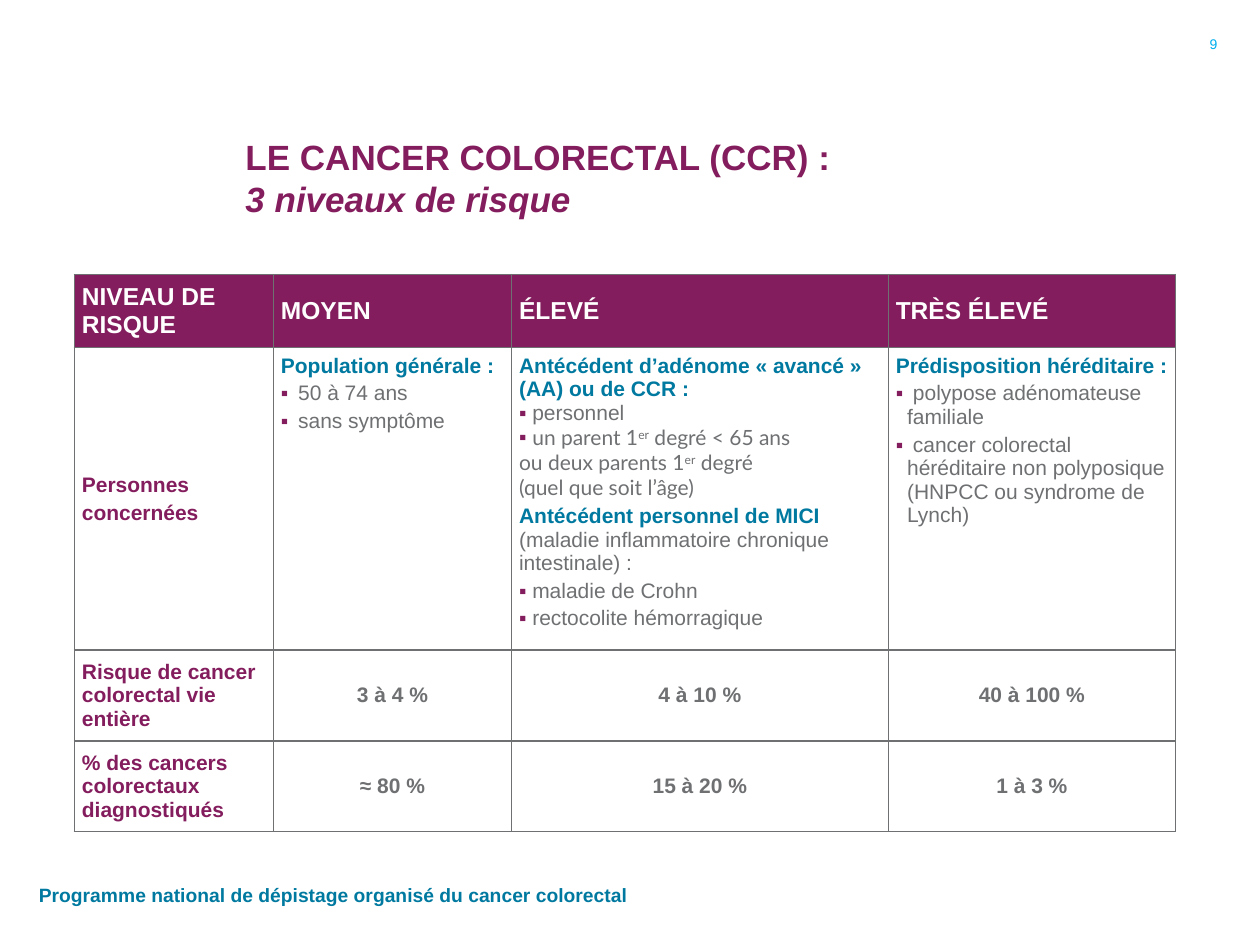
"""Build the slide on the three risk levels of colorectal cancer."""
from copy import deepcopy

from lxml import etree
from pptx import Presentation
from pptx import util as u
from pptx.dml.color import RGBColor
from pptx.enum import text
from pptx.oxml.ns import qn

COLORS = {"plum": "841D5D", "teal": "0079A0", "grey": "6E7072", "white": "FFFFFF", "cyan": "00AEEF"}
STYLES = {
    "title": {"size": 20, "color": "plum", "bold": True},
    "subtitle": {"size": 20, "color": "plum", "bold": True, "italic": True},
    "footer": {"size": 11, "color": "teal", "bold": True},
    "number": {"size": 8, "color": "cyan"},
    "header": {"size": 14, "color": "white", "bold": True},
    "label": {"size": 12, "color": "plum", "bold": True},
    "heading": {"size": 12, "color": "teal", "bold": True},
    "value": {"size": 12, "color": "grey", "bold": True},
    "body": {"size": 12, "color": "grey"},
    "lato": {"size": 12, "color": "grey", "name": "Lato"},
    "super": {"size": 12, "color": "grey", "name": "Lato", "baseline": "30000"},
}


def add_spans(para, spans):
    for style, words in spans:
        for index, line in enumerate(words.split("\n")):
            if index:
                line_break = para._p.add_br()
                line_break.append(deepcopy(span._r.rPr))
            span = para.add_run()
            span.text = line
            values = {"name": "Arial", "bold": False, **STYLES[style]}
            span.font.color.rgb = RGBColor.from_string(COLORS[values.pop("color")])
            span.font.size = u.Pt(values.pop("size"))
            if "baseline" in values:
                span.font._element.set("baseline", values.pop("baseline"))
            for name, value in values.items():
                setattr(span.font, name, value)


def fill_frame(frame, paragraphs, align=text.PP_ALIGN.LEFT):
    for index, (spans, layout) in enumerate(paragraphs):
        para = frame.paragraphs[0] if index == 0 else frame.add_paragraph()
        para.alignment = align
        para.space_before = u.Pt(layout.get("before", 2.4) if index else 0)
        if "indent" in layout:
            props = para._p.get_or_add_pPr()
            props.set("marL", str(u.Inches(layout["indent"])))
            props.set("indent", str(-u.Inches(layout["indent"])))
            color = etree.SubElement(props, qn("a:buClr"))
            etree.SubElement(color, qn("a:srgbClr"), val=COLORS["plum"])
            etree.SubElement(props, qn("a:buFont"), typeface="Arial")
            etree.SubElement(props, qn("a:buChar"), char="▪")
        add_spans(para, spans)


deck = Presentation()
deck.slide_width, deck.slide_height = u.Inches(10), u.Inches(7.5)
page = deck.slides.add_slide(deck.slide_layouts[6])

LEFT, RIGHT, CENTER = text.PP_ALIGN.LEFT, text.PP_ALIGN.RIGHT, text.PP_ALIGN.CENTER
MIDDLE, BOTTOM, TOP = text.MSO_ANCHOR.MIDDLE, text.MSO_ANCHOR.BOTTOM, text.MSO_ANCHOR.TOP
boxes = [
    ((1.85, 0.29, 7.6, 1.5), BOTTOM, LEFT,
     [("title", "LE CANCER COLORECTAL (CCR) :\n"), ("subtitle", "3 niveaux de risque")]),
    ((0.21, 6.9, 4.95, 0.4), MIDDLE, LEFT,
     [("footer", "Programme national de dépistage organisé du cancer colorectal")]),
    ((9.33, 0.21, 0.43, 0.28), MIDDLE, RIGHT, [("number", "9")]),
]
for place, anchor, align, spans in boxes:
    box = page.shapes.add_textbox(*map(u.Inches, place))
    box.text_frame.word_wrap = True
    box.text_frame.vertical_anchor = anchor
    fill_frame(box.text_frame, [(spans, {})], align)

hanging, flush, tight = {"indent": 0.09}, {"indent": 0}, {"indent": 0, "before": 0}
average = [
    ([("heading", "Population générale :")], {}),
    ([("body", " 50 à 74 ans")], hanging),
    ([("body", " sans symptôme")], hanging),
]
high = [
    ([("heading", "Antécédent d’adénome « avancé »\n(AA) ou de CCR :")], {}),
    ([("body", " personnel")], tight),
    ([("body", " "), ("lato", "un parent 1"), ("super", "er"),
      ("lato", " degré < 65 ans \nou deux parents 1"), ("super", "er"),
      ("lato", " degré \n(quel que soit l’âge)")], tight),
    ([("heading", "Antécédent personnel de MICI "),
      ("body", "(maladie inflammatoire chronique intestinale) :")], {}),
    ([("body", " maladie de Crohn")], flush),
    ([("body", " rectocolite hémorragique")], flush),
]
very_high = [
    ([("heading", "Prédisposition héréditaire :")], {}),
    ([("body", " polypose adénomateuse familiale")], hanging),
    ([("body", " cancer colorectal héréditaire non polyposique (HNPCC ou syndrome de Lynch)")], hanging),
]
people = [([("label", "Personnes")], {}), ([("label", "concernées")], {})]
rows = [
    [[([("header", words)], {})] for words in ("NIVEAU DE RISQUE", "MOYEN", "ÉLEVÉ", "TRÈS ÉLEVÉ")],
    [people, average, high, very_high],
]
for label, *values in [
    ("Risque de cancer colorectal vie entière", "3 à 4 %", "4 à 10 %", "40 à 100 %"),
    ("% des cancers colorectaux diagnostiqués", "≈ 80 %", "15 à 20 %", "1 à 3 %"),
]:
    rows.append([[([("label", label)], {})]] + [[([("value", value)], {})] for value in values])

widths, heights = (1.58, 1.89, 2.99, 2.28), (0.58, 2.29, 0.72, 0.72)
table = page.shapes.add_table(
    len(heights), len(widths), u.Inches(0.59), u.Inches(2.18),
    u.Inches(sum(widths)), u.Inches(sum(heights))).table
table.first_row = table.horz_banding = False
for column, width in zip(table.columns, widths):
    column.width = u.Inches(width)
for row, height in zip(table.rows, heights):
    row.height = u.Inches(height)

for row_index, row in enumerate(rows):
    for column_index, paragraphs in enumerate(row):
        cell = table.cell(row_index, column_index)
        cell.margin_left = cell.margin_right = u.Inches(0.06)
        cell.margin_top = cell.margin_bottom = u.Inches(0.05)
        cell.vertical_anchor = TOP if row_index == 1 and column_index else MIDDLE
        fill_frame(cell.text_frame, paragraphs, CENTER if row_index > 1 and column_index else LEFT)
        if row_index == 0:
            cell.fill.solid()
            cell.fill.fore_color.rgb = RGBColor.from_string(COLORS["plum"])
        else:
            cell.fill.background()
        props = cell._tc.get_or_add_tcPr()
        for index, side in enumerate(("lnL", "lnR", "lnT", "lnB")):
            border = etree.Element(qn(f"a:{side}"), w=str(u.Pt(1)))
            solid = etree.SubElement(border, qn("a:solidFill"))
            etree.SubElement(solid, qn("a:srgbClr"), val=COLORS["grey"])
            props.insert(index, border)

deck.save("out.pptx")
